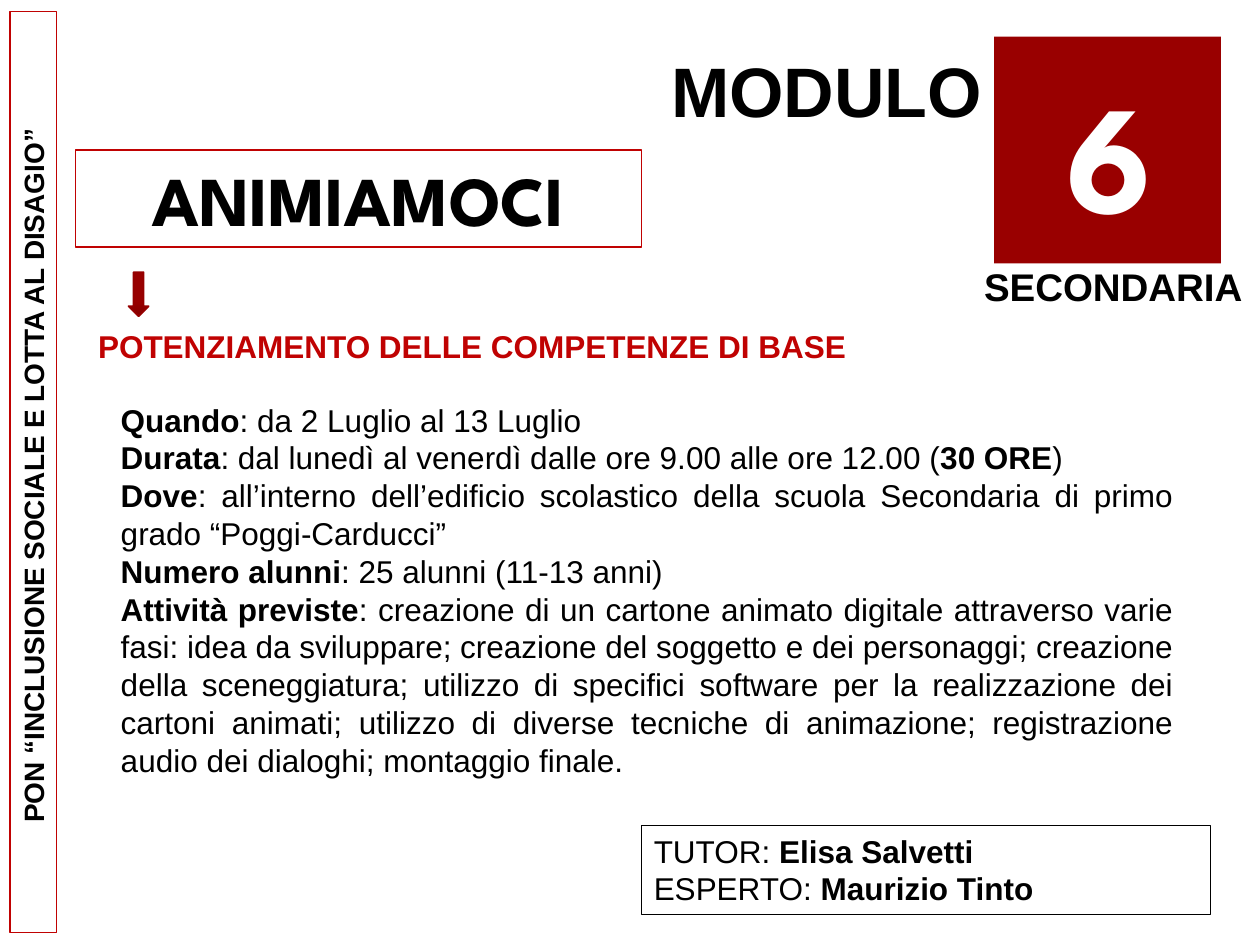
"""Builds the slide that presents module 6, Animiamoci."""
from dataclasses import dataclass

from pptx import Presentation
from pptx import util as u
from pptx.dml.color import RGBColor
from pptx.enum import shapes, text


@dataclass(frozen=True)
class Theme:
    """Colours, fonts and type sizes of the slide."""
    black: str = "000000"
    white: str = "FFFFFF"
    red: str = "C00202"
    block: str = "990000"
    arrow_dark: str = "830000"
    arrow_line: str = "960000"
    body_font: str = "Arial"
    display_font: str = "League Spartan"
    side: int = 16
    body: int = 18
    level: int = 22
    title: int = 40
    number: int = 88


class SlideBuilder:
    """Adds styled elements to the current slide."""

    def __init__(self, slide, theme):
        """Keep the slide and its theme."""
        self.slide = slide
        self.theme = theme

    def shape(self, kind, place, fill=None, line=None, width=0.75):
        """Add a flat preset shape."""
        shape = self.slide.shapes.add_shape(kind, *map(u.Inches, place))
        shape.shadow.inherit = False
        if fill:
            shape.fill.solid()
            shape.fill.fore_color.rgb = RGBColor.from_string(fill)
        else:
            shape.fill.background()
        if line:
            shape.line.color.rgb = RGBColor.from_string(line)
            shape.line.width = u.Pt(width)
        else:
            shape.line.fill.background()
        return shape

    def set_lines(self, box, lines, size, align, font=None, color=None):
        """Fill a box with lines in which asterisks enclose bold words."""
        frame = box.text_frame
        frame.word_wrap = True
        frame.auto_size = text.MSO_AUTO_SIZE.SHAPE_TO_FIT_TEXT
        frame.vertical_anchor = text.MSO_ANCHOR.TOP
        frame.text = "\n".join(lines)
        for para, line in zip(frame.paragraphs, lines):
            para.alignment = align
            para.text = ""
            for index, words in enumerate(line.split("*")):
                if words:
                    span = para.add_run()
                    span.text = words
                    span.font.bold = index % 2 == 1
                    span.font.size = u.Pt(size)
                    span.font.name = font or self.theme.body_font
                    span.font.color.rgb = RGBColor.from_string(color or self.theme.black)

    def label(self, place, lines, size, align, font=None, color=None):
        """Add a text box without an outline."""
        box = self.slide.shapes.add_textbox(*map(u.Inches, place))
        self.set_lines(box, lines, size, align, font, color)

    def framed(self, place, lines, size, align, line, font=None, width=0.75, rotation=0):
        """Add outlined text, turned if needed."""
        box = self.shape(shapes.MSO_SHAPE.RECTANGLE, place, line=line, width=width)
        box.rotation = rotation
        self.set_lines(box, lines, size, align, font)

    def arrow(self, place):
        """Add the shaded down arrow."""
        theme = self.theme
        arrow = self.shape(shapes.MSO_SHAPE.DOWN_ARROW, place, line=theme.arrow_line, width=1)
        arrow.fill.gradient()
        arrow.fill.gradient_angle = 90
        stops = ((0, theme.arrow_dark), (0.35, theme.block))
        for stop, (position, color) in zip(arrow.fill.gradient_stops, stops):
            stop.position = position
            stop.color.rgb = RGBColor.from_string(color)


DETAILS = [
    "*Quando*: da 2 Luglio al 13 Luglio ",
    "*Durata*: dal lunedì al venerdì dalle ore 9.00 alle ore 12.00 (*30 ORE*)",
    "*Dove*: all’interno dell’edificio scolastico della scuola Secondaria "
    "di primo grado “Poggi-Carducci”",
    "*Numero alunni*: 25 alunni (11-13 anni)",
    "*Attività previste*: creazione di un cartone animato digitale attraverso "
    "varie fasi: idea da sviluppare; creazione del soggetto e dei personaggi; "
    "creazione della sceneggiatura; utilizzo di specifici software per la "
    "realizzazione dei cartoni animati; utilizzo di diverse tecniche di "
    "animazione; registrazione audio dei dialoghi; montaggio finale. ",
]
STAFF = ["TUTOR: *Elisa Salvetti*", "ESPERTO: *Maurizio Tinto*"]


def main():
    """Build and save the deck."""
    deck = Presentation()
    deck.slide_width, deck.slide_height = u.Inches(10), u.Inches(7.5)
    theme = Theme()
    page = SlideBuilder(deck.slides.add_slide(deck.slide_layouts[6]), theme)
    align = text.PP_ALIGN

    page.shape(shapes.MSO_SHAPE.RECTANGLE, (7.89, 0.29, 1.8, 1.8), fill=theme.block)
    page.framed((-3.39, 3.56, 7.31, 0.37),
                ["*PON “INCLUSIONE SOCIALE E LOTTA AL DISAGIO” *"],
                theme.side, align.CENTER, theme.red, width=1, rotation=270)
    page.label((5.09, 0.33, 2.8, 0.77), ["*MODULO*"], theme.title, align.RIGHT)
    page.label((8.02, 0.42, 1.57, 1.58), ["*6*"], theme.number, align.CENTER,
               theme.display_font, theme.white)
    page.label((7.69, 2.04, 2.29, 0.47), ["*SECONDARIA*"], theme.level, align.CENTER)
    page.framed((0.6, 1.19, 4.49, 0.77), ["*ANIMIAMOCI*"], theme.title,
                align.CENTER, theme.red, theme.display_font)
    page.label((0.68, 2.55, 7.22, 0.4), ["*POTENZIAMENTO DELLE COMPETENZE DI BASE*"],
               theme.body, align.LEFT, color=theme.red)
    page.arrow((1.02, 2.16, 0.16, 0.35))
    page.label((0.86, 3.13, 8.55, 3.13), DETAILS, theme.body, align.JUSTIFY)
    page.framed((5.09, 6.55, 4.52, 0.71), STAFF, theme.body, align.LEFT, theme.black)

    deck.save("out.pptx")


if __name__ == "__main__":
    main()
